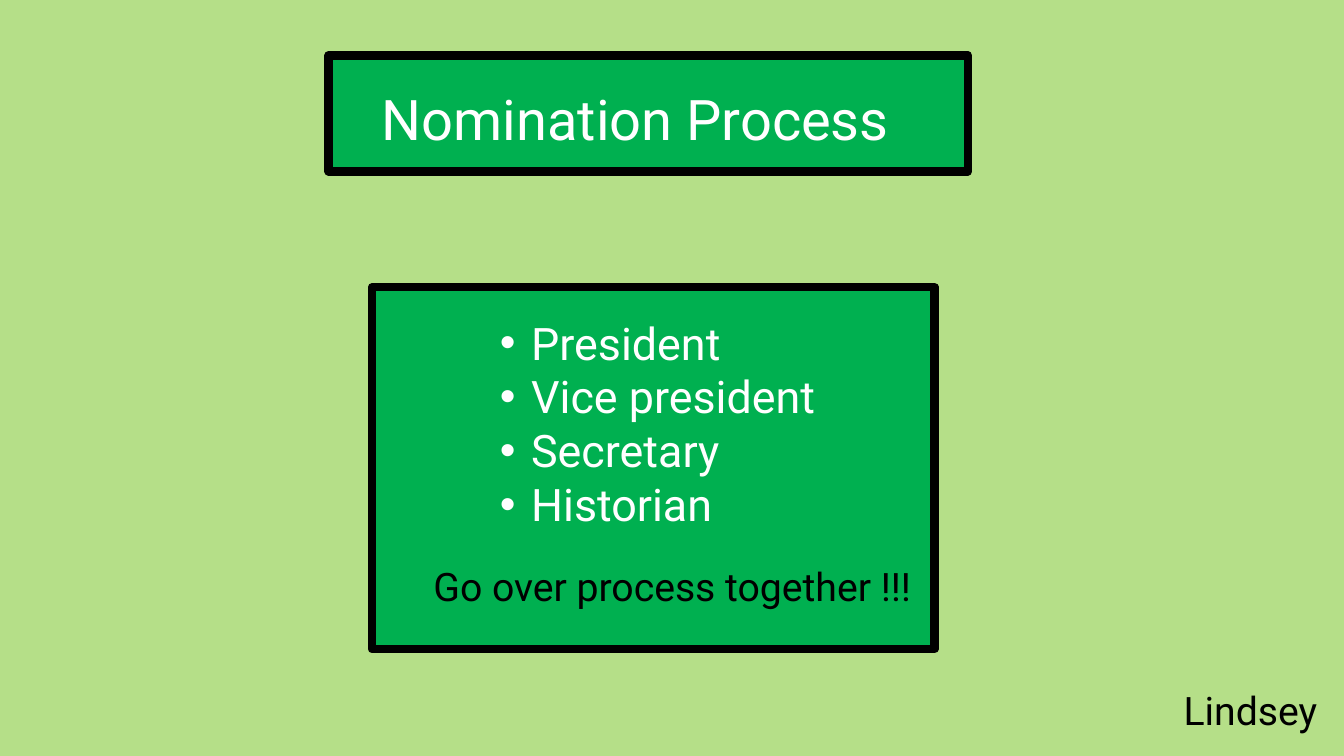
import pptx
import pptx.util
import pptx.dml.color
import pptx.enum.shapes
import pptx.enum.text
import lxml.etree
from pptx.util import Inches

theme = {
    "font": "Roboto",
    "back": "B5DF88",
    "panel": "00B050",
    "dark": "000000",
    "light": "FFFFFF",
    "title": 40,
    "list": 32,
    "note": 28,
    "edge": 6,
}


def tint(name):
    return pptx.dml.color.RGBColor.from_string(theme[name])


def write(box, lines, size, color):
    area = slide.shapes.add_textbox(*map(Inches, box))
    frame = area.text_frame
    frame.word_wrap = True
    frame.text = "\n".join(lines)
    for para in frame.paragraphs:
        for run in para.runs:
            run.font.name = theme["font"]
            run.font.size = pptx.util.Pt(theme[size])
            run.font.color.rgb = tint(color)
    return frame


deck = pptx.Presentation()
deck.slide_width = Inches(13.33)
deck.slide_height = Inches(7.5)
slide = deck.slides.add_slide(deck.slide_layouts[6])
slide.background.fill.solid()
slide.background.fill.fore_color.rgb = tint("back")

for box in ((3.69, 2.85, 5.58, 3.59), (3.26, 0.55, 6.34, 1.15)):
    panel = slide.shapes.add_shape(
        pptx.enum.shapes.MSO_SHAPE.RECTANGLE, *map(Inches, box))
    panel.shadow.inherit = False
    panel.fill.solid()
    panel.fill.fore_color.rgb = tint("panel")
    panel.line.color.rgb = tint("dark")
    panel.line.width = pptx.util.Pt(theme["edge"])

title = write((3.69, 0.69, 5.9, 0.87), ["Nomination Process"], "title", "light")
title.vertical_anchor = pptx.enum.text.MSO_ANCHOR.BOTTOM
title.paragraphs[0].line_spacing = 0.9

write((11.64, 6.76, 1.69, 0.57), ["Lindsey"], "note", "dark")

roles = ["President", "Vice president", "Secretary", "Historian"]
names = write((4.86, 3.08, 7.69, 2.26), roles, "list", "light")
for para in names.paragraphs:
    props = para._p.get_or_add_pPr()
    props.set("marL", str(Inches(0.31)))
    props.set("indent", str(Inches(-0.31)))
    for tag, key, value in (("buFont", "typeface", "Arial"), ("buChar", "char", "•")):
        mark = lxml.etree.SubElement(props, pptx.oxml.ns.qn("a:" + tag))
        mark.set(key, value)

write((4.2, 5.53, 6.71, 0.57), ["Go over process together !!!"], "note", "dark")

deck.save("out.pptx")
